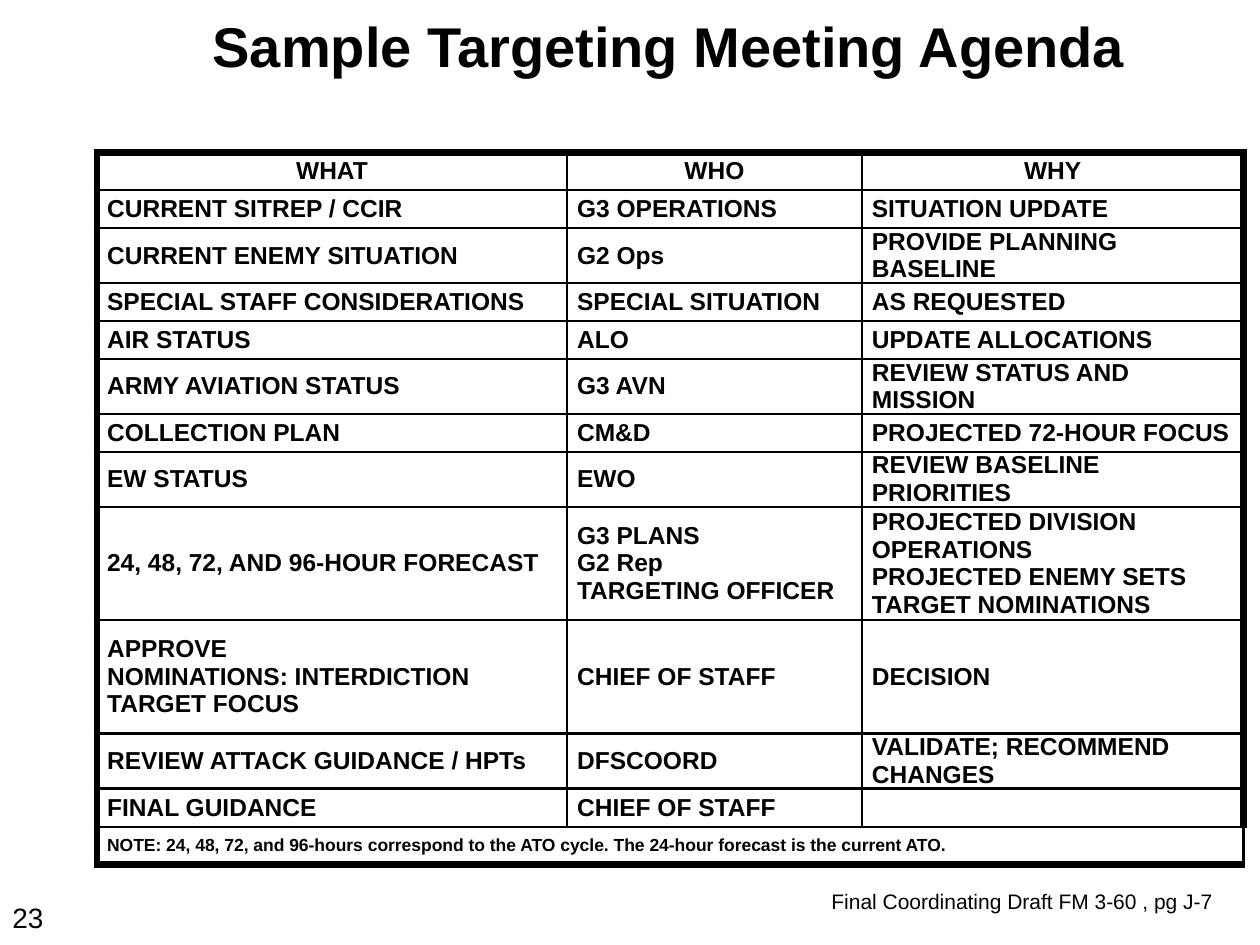
from lxml import etree
from pptx import Presentation
from pptx.dml.color import RGBColor
from pptx.enum import text
from pptx.oxml import ns
from pptx.util import Inches, Pt

INK = "000000"
TITLE = "Sample Targeting Meeting Agenda"
AGENDA = [
    ("WHAT", "WHO", "WHY"),
    ("CURRENT SITREP / CCIR", "G3 OPERATIONS", "SITUATION UPDATE"),
    ("CURRENT ENEMY SITUATION", "G2 Ops", "PROVIDE PLANNING BASELINE"),
    ("SPECIAL STAFF CONSIDERATIONS", "SPECIAL SITUATION", "AS REQUESTED"),
    ("AIR STATUS", "ALO", "UPDATE ALLOCATIONS"),
    ("ARMY AVIATION STATUS", "G3 AVN", "REVIEW STATUS AND MISSION"),
    ("COLLECTION PLAN", "CM&D", "PROJECTED 72-HOUR FOCUS"),
    ("EW STATUS", "EWO", "REVIEW BASELINE PRIORITIES"),
    ("24, 48, 72, AND 96-HOUR FORECAST",
     "G3 PLANS\nG2 Rep\nTARGETING OFFICER",
     "PROJECTED DIVISION OPERATIONS\nPROJECTED ENEMY SETS\nTARGET NOMINATIONS"),
    ("APPROVE\nNOMINATIONS: INTERDICTION\nTARGET FOCUS", "CHIEF OF STAFF", "DECISION"),
    ("REVIEW ATTACK GUIDANCE / HPTs", "DFSCOORD", "VALIDATE; RECOMMEND CHANGES"),
    ("FINAL GUIDANCE", "CHIEF OF STAFF", ""),
    ("NOTE: 24, 48, 72, and 96-hours correspond to the ATO cycle. "
     "The 24-hour forecast is the current ATO.", "", ""),
]
COLUMN_WIDTHS = [3.73, 2.34, 3.03]
LINE_HEIGHT = 0.3
INNER, OUTER = 1.5, 4.5
FOOTERS = [
    ("Final Coordinating Draft FM 3-60 , pg J-7", (6.5, 7, 3.25, 0.3), 12, False),
    ("23", (0, 7.1, 0.46, 0.4), 16, True),
]


def color(hex_value):
    return RGBColor.from_string(hex_value)


def format_text(frame, size, bold=False, align=text.PP_ALIGN.LEFT):
    for paragraph in frame.paragraphs:
        paragraph.alignment = align
        for run in paragraph.runs:
            run.font.name = "Arial"
            run.font.size = Pt(size)
            run.font.bold = bold
            run.font.color.rgb = color(INK)


def set_borders(cell, widths):
    properties = cell._tc.get_or_add_tcPr()
    for side, width in zip("LRTB", widths):
        line = etree.SubElement(properties, ns.qn(f"a:ln{side}"), w=str(Pt(width)))
        fill = etree.SubElement(line, ns.qn("a:solidFill"))
        etree.SubElement(fill, ns.qn("a:srgbClr"), val=INK)


def add_title(slide):
    title = slide.shapes.title
    title.left, title.top, title.width, title.height = map(Inches, (0.81, 0.01, 9, 0.78))
    frame = title.text_frame
    frame.text = TITLE
    frame.vertical_anchor = text.MSO_ANCHOR.MIDDLE
    frame.margin_bottom = Inches(0.13)
    format_text(frame, 32, True, text.PP_ALIGN.CENTER)


def add_agenda(slide):
    heights = [LINE_HEIGHT * max(entry.count("\n") + 1 for entry in row) for row in AGENDA]
    last_row, last_column = len(AGENDA) - 1, len(COLUMN_WIDTHS) - 1
    agenda = slide.shapes.add_table(
        len(AGENDA), len(COLUMN_WIDTHS), Inches(0.77), Inches(1.21),
        Inches(sum(COLUMN_WIDTHS)), Inches(sum(heights))).table
    agenda.first_row = agenda.horz_banding = False
    for column, width in zip(agenda.columns, COLUMN_WIDTHS):
        column.width = Inches(width)
    for r, (entries, height) in enumerate(zip(AGENDA, heights)):
        agenda.rows[r].height = Inches(height)
        align = text.PP_ALIGN.LEFT if r else text.PP_ALIGN.CENTER
        for c, entry in enumerate(entries):
            cell = agenda.cell(r, c)
            cell.text = entry
            cell.vertical_anchor = text.MSO_ANCHOR.MIDDLE
            cell.margin_left = cell.margin_right = Inches(0.08)
            cell.margin_top = cell.margin_bottom = 0
            edges = (c == 0, c == last_column, r == 0, r == last_row)
            set_borders(cell, [OUTER if edge else INNER for edge in edges])
            cell.fill.background()
            format_text(cell.text_frame, 10 if r == last_row else 14, True, align)
    agenda.cell(last_row, 0).merge(agenda.cell(last_row, last_column))


def add_footers(slide):
    for wording, place, size, wrap in FOOTERS:
        frame = slide.shapes.add_textbox(*map(Inches, place)).text_frame
        frame.text = wording
        frame.word_wrap = wrap
        format_text(frame, size)


def main():
    deck = Presentation()
    deck.slide_width, deck.slide_height = Inches(10), Inches(7.5)
    slide = deck.slides.add_slide(deck.slide_layouts[5])
    add_title(slide)
    add_agenda(slide)
    add_footers(slide)
    deck.save("out.pptx")


if __name__ == "__main__":
    main()
